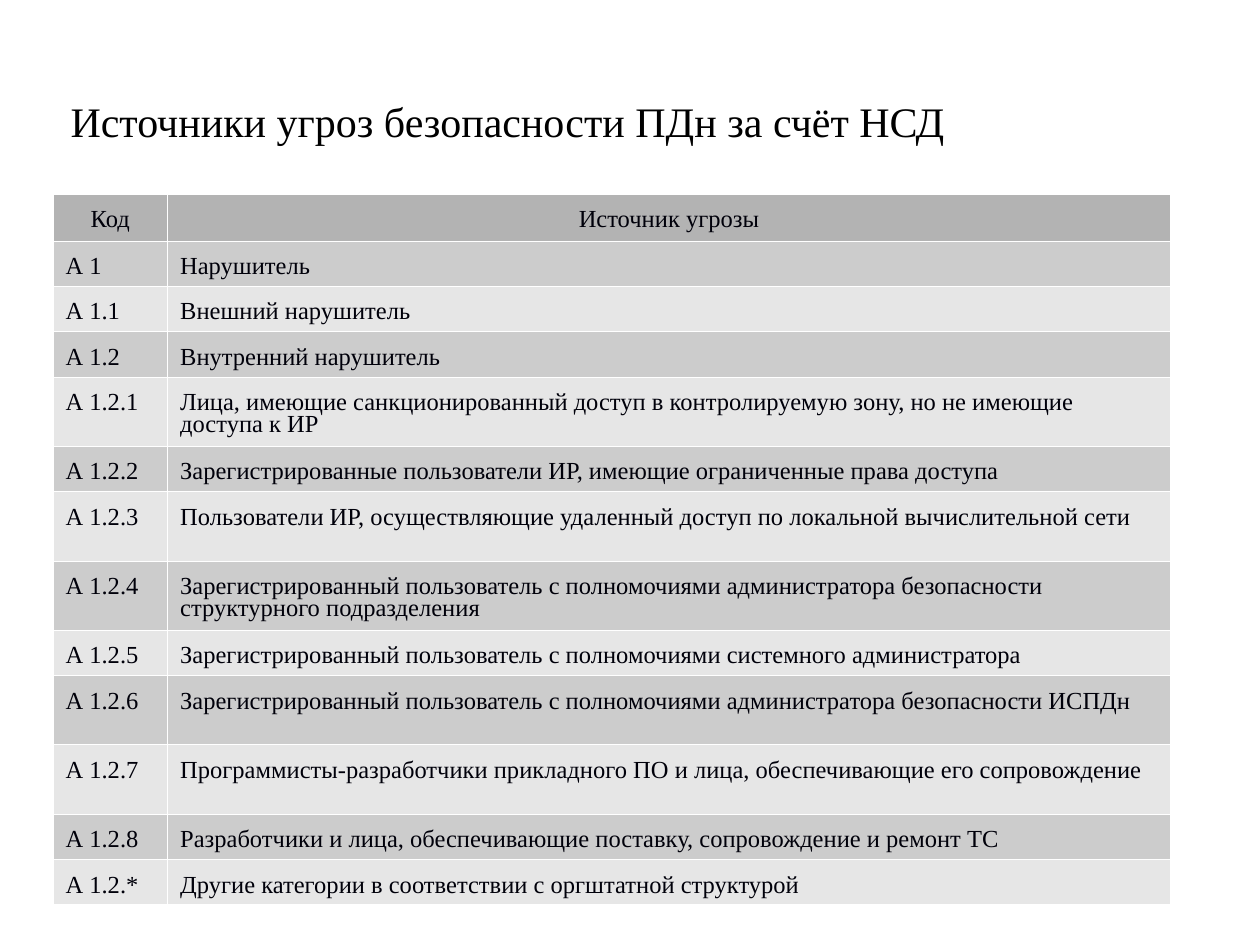
from pptx import Presentation
from pptx import util as u
from pptx.dml.color import RGBColor
from pptx.enum import text
from pptx.oxml import parse_xml
from pptx.oxml.ns import nsdecls

BLACK = RGBColor(0x00, 0x00, 0x00)
INK = RGBColor(0x00, 0x00, 0x0A)
WHITE = RGBColor(0xFF, 0xFF, 0xFF)
HEADER = RGBColor(0xB3, 0xB3, 0xB3)
BANDS = (RGBColor(0xE6, 0xE6, 0xE6), RGBColor(0xCC, 0xCC, 0xCC))

HEADER_H, SINGLE_H, DOUBLE_H = 0.37, 0.36, 0.55
COLUMN_WIDTHS = (0.91, 7.96)
DOUBLE_ROWS = ("А 1.2.1", "А 1.2.3", "А 1.2.4", "А 1.2.6", "А 1.2.7")

ROWS = [
    ("Код", "Источник угрозы"),
    ("А 1", "Нарушитель"),
    ("А 1.1", "Внешний нарушитель"),
    ("А 1.2", "Внутренний нарушитель"),
    ("А 1.2.1", "Лица, имеющие санкционированный доступ в контролируемую зону, "
                "но не имеющие доступа к ИР"),
    ("А 1.2.2", "Зарегистрированные пользователи ИР, имеющие ограниченные права доступа"),
    ("А 1.2.3", "Пользователи ИР, осуществляющие удаленный доступ по локальной "
                "вычислительной сети"),
    ("А 1.2.4", "Зарегистрированный пользователь с полномочиями администратора "
                "безопасности структурного подразделения"),
    ("А 1.2.5", "Зарегистрированный пользователь с полномочиями системного администратора"),
    ("А 1.2.6", "Зарегистрированный пользователь с полномочиями администратора "
                "безопасности ИСПДн"),
    ("А 1.2.7", "Программисты-разработчики прикладного ПО и лица, обеспечивающие "
                "его сопровождение"),
    ("А 1.2.8", "Разработчики и лица, обеспечивающие поставку, сопровождение и ремонт ТС"),
    ("А 1.2.*", "Другие категории в соответствии с оргштатной структурой"),
]


class SlideBuilder:
    """Holds the text style and the current slide."""

    font = "Times New Roman"

    def __init__(self, slide):
        self.slide = slide

    def style(self, p, size, color, align):
        p.alignment = align
        p.font.name = self.font
        p.font.size = u.Pt(size)
        p.font.bold = False
        p.font.color.rgb = color

    def title(self, words, left, top, width, height):
        sp = self.slide.shapes.title
        sp.left, sp.top = u.Inches(left), u.Inches(top)
        sp.width, sp.height = u.Inches(width), u.Inches(height)
        tf = sp.text_frame
        tf.text = words
        tf.word_wrap = True
        tf.auto_size = text.MSO_AUTO_SIZE.NONE
        tf.vertical_anchor = text.MSO_ANCHOR.TOP
        self.style(tf.paragraphs[0], 24, BLACK, text.PP_ALIGN.LEFT)

    def table(self, rows, left, top, widths, heights):
        frame = self.slide.shapes.add_table(
            len(rows), len(widths), u.Inches(left), u.Inches(top),
            u.Inches(sum(widths)), u.Inches(sum(heights)))
        table = frame.table
        for column, width in zip(table.columns, widths):
            column.width = u.Inches(width)
        for i, (row, height) in enumerate(zip(rows, heights)):
            table.rows[i].height = u.Inches(height)
            for j, words in enumerate(row):
                self.cell(table.cell(i, j), words, i)

    def cell(self, cell, words, row):
        self.borders(cell)
        cell.fill.solid()
        cell.fill.fore_color.rgb = BANDS[row % 2] if row else HEADER
        cell.margin_left = cell.margin_right = u.Inches(0.1)
        cell.margin_top, cell.margin_bottom = u.Inches(0.13), u.Inches(0.05)
        cell.vertical_anchor = text.MSO_ANCHOR.TOP
        cell.text = words
        p = cell.text_frame.paragraphs[0]
        p.line_spacing = 0.81
        self.style(p, 14, INK, text.PP_ALIGN.LEFT if row else text.PP_ALIGN.CENTER)

    def borders(self, cell):
        tc_pr = cell._tc.get_or_add_tcPr()
        for side in ("lnL", "lnR", "lnT", "lnB"):
            tc_pr.append(parse_xml(
                f'<a:{side} {nsdecls("a")} w="{u.Pt(0.06)}"><a:solidFill>'
                f'<a:srgbClr val="{WHITE}"/></a:solidFill></a:{side}>'))


def main():
    prs = Presentation()
    prs.slide_width, prs.slide_height = u.Inches(10), u.Inches(7.5)
    s = SlideBuilder(prs.slides.add_slide(prs.slide_layouts[5]))

    # Title
    s.title("Источники угроз безопасности ПДн за счёт НСД", 0.46, 0.71, 8.91, 0.71)

    # Table of threat sources
    heights = [HEADER_H] + [DOUBLE_H if code in DOUBLE_ROWS else SINGLE_H
                            for code, _ in ROWS[1:]]
    s.table(ROWS, 0.42, 1.54, COLUMN_WIDTHS, heights)

    prs.save("out.pptx")


if __name__ == "__main__":
    main()
